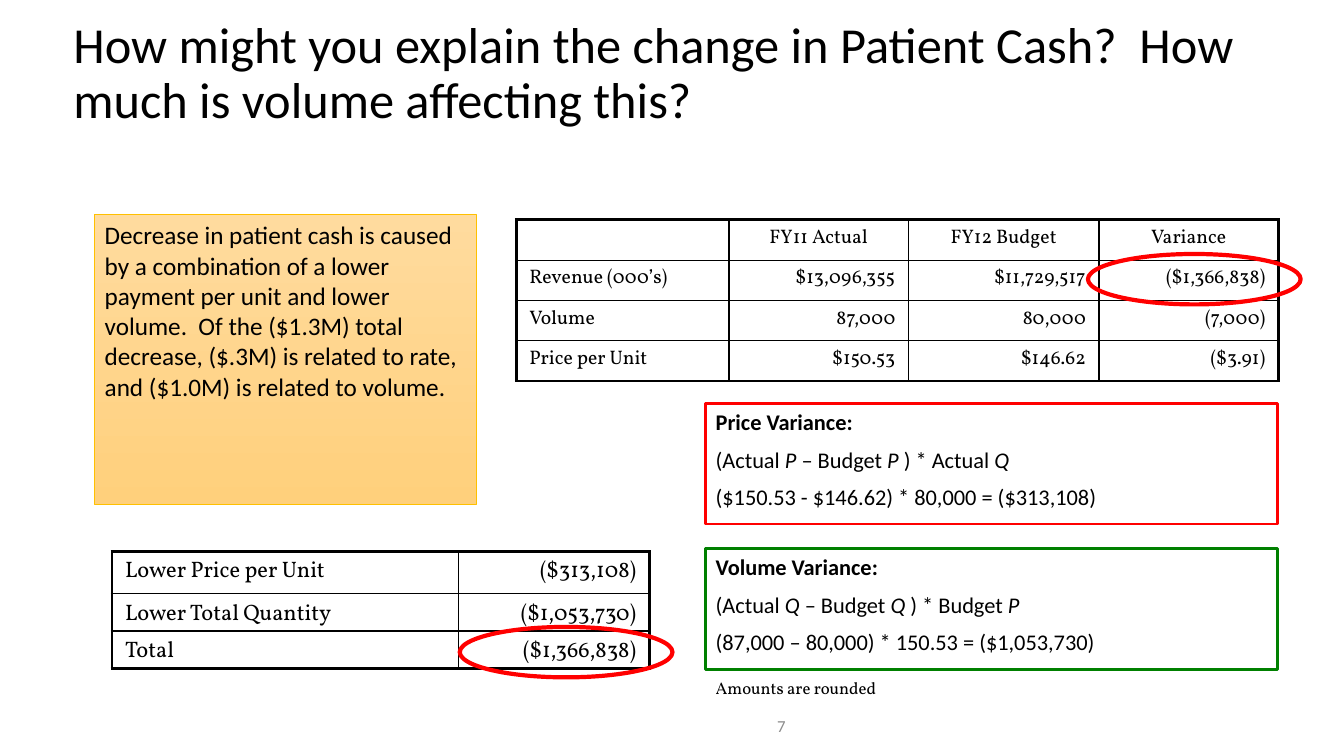
from dataclasses import dataclass

import pptx
import pptx.dml.color
import pptx.enum.shapes
import pptx.enum.text
import pptx.oxml
import pptx.oxml.ns
import pptx.util

Inches = pptx.util.Inches
Pt = pptx.util.Pt
ALIGN = pptx.enum.text.PP_ALIGN
ANCHOR = pptx.enum.text.MSO_ANCHOR
SHAPE = pptx.enum.shapes.MSO_SHAPE

COLORS = {
    "text": "000000",
    "number": "8C8C8C",
    "red": "FF0000",
    "green": "008000",
    "gold": "FFC000",
    "gold_top": "FFDB9E",
    "gold_bottom": "FFD07C",
}
SANS, SERIF = "Calibri", "Vollkorn"


@dataclass
class TextBlock:
    """A text area; underscores in a paragraph switch italics on and off."""
    bounds: tuple[float, float, float, float]
    paragraphs: list[str]
    size: float
    font: str = SANS
    color: str = "text"
    align: ALIGN = ALIGN.LEFT
    anchor: ANCHOR = ANCHOR.TOP
    line_spacing: float = 1.0
    bold_heading: bool = False
    outline: str = ""
    outline_width: float = 2
    gradient: tuple[str, ...] = ()


@dataclass
class Grid:
    left: float
    top: float
    columns: list[float]
    rows: list[float]
    values: list[list[str]]
    size: float
    has_header: bool = False


def rgb(name: str) -> pptx.dml.color.RGBColor:
    return pptx.dml.color.RGBColor.from_string(COLORS[name])


def apply_format(target: object, values: dict) -> None:
    for name, value in values.items():
        setattr(target, name, value)


def add_run(paragraph, text: str, font: str, size: float, color: str = "text",
            bold: bool = False, italic: bool = False) -> None:
    run = paragraph.add_run()
    run.text = text
    apply_format(run.font, {"name": font, "size": Pt(size), "bold": bold, "italic": italic})
    run.font.color.rgb = rgb(color)


def add_outline_shape(slide, kind: SHAPE, bounds: tuple, color: str, width: float):
    shape = slide.shapes.add_shape(kind, *map(Inches, bounds))
    shape.shadow.inherit = False
    shape.fill.background()
    shape.line.color.rgb = rgb(color)
    shape.line.width = Pt(width)
    return shape


def add_text_block(slide, block: TextBlock) -> None:
    if block.outline:
        shape = add_outline_shape(slide, SHAPE.RECTANGLE, block.bounds,
                                  block.outline, block.outline_width)
    else:
        shape = slide.shapes.add_textbox(*map(Inches, block.bounds))
    if block.gradient:
        shape.fill.gradient()
        shape.fill.gradient_angle = 270
        for stop, color in zip(shape.fill.gradient_stops, block.gradient):
            stop.color.rgb = rgb(color)
    frame = shape.text_frame
    apply_format(frame, {"word_wrap": True, "vertical_anchor": block.anchor})
    for index, text in enumerate(block.paragraphs):
        paragraph = frame.add_paragraph() if index else frame.paragraphs[0]
        apply_format(paragraph, {
            "alignment": block.align,
            "line_spacing": block.line_spacing,
            "space_before": Pt(7.6 if index else 0),
        })
        for part, piece in enumerate(text.split("_")):
            if piece:
                add_run(paragraph, piece, block.font, block.size, block.color,
                        bold=block.bold_heading and index == 0, italic=part % 2 == 1)


def set_borders(cell, thick_sides: dict[str, bool]) -> None:
    properties = cell._tc.get_or_add_tcPr()
    for index, (side, thick) in enumerate(thick_sides.items()):
        properties.insert(index, pptx.oxml.parse_xml(
            f'<a:ln{side} {pptx.oxml.ns.nsdecls("a")} w="{Pt(2.25 if thick else 1)}">'
            f'<a:solidFill><a:srgbClr val="{COLORS["text"]}"/></a:solidFill></a:ln{side}>'))


def add_grid(slide, grid: Grid) -> None:
    row_count, column_count = len(grid.rows), len(grid.columns)
    table = slide.shapes.add_table(
        row_count, column_count, Inches(grid.left), Inches(grid.top),
        Inches(sum(grid.columns)), Inches(sum(grid.rows))).table
    apply_format(table, {"first_row": False, "horz_banding": False})
    for column, width in zip(table.columns, grid.columns):
        column.width = Inches(width)
    for row, height in zip(table.rows, grid.rows):
        row.height = Inches(height)
    for r, values in enumerate(grid.values):
        for c, text in enumerate(values):
            cell = table.cell(r, c)
            apply_format(cell, {
                "margin_left": Inches(0.13), "margin_right": Inches(0.13),
                "margin_top": Inches(0.05), "margin_bottom": Inches(0.05),
            })
            cell.fill.background()
            set_borders(cell, {"L": c == 0, "R": c == column_count - 1,
                               "T": r == 0, "B": r == row_count - 1})
            paragraph = cell.text_frame.paragraphs[0]
            body_align = ALIGN.RIGHT if c else ALIGN.LEFT
            apply_format(paragraph, {
                "alignment": ALIGN.CENTER if grid.has_header and r == 0 else body_align,
                "space_after": Pt(12),
            })
            add_run(paragraph, text, SERIF, grid.size)


TEXT_BLOCKS = [
    # Title and slide number
    TextBlock((0.63, 0.17, 12.04, 1.14),
              ["How might you explain the change in Patient Cash?  How much is volume "
               "affecting this?"],
              36, anchor=ANCHOR.MIDDLE, line_spacing=0.9),
    TextBlock((5.11, 7.08, 2.78, 0.25), ["7"], 12, color="number",
              align=ALIGN.RIGHT, anchor=ANCHOR.MIDDLE),
    # Variance formulas
    TextBlock((7, 4, 5.67, 1.2),
              ["Price Variance:", "(Actual _P_ – Budget _P_ ) * Actual _Q_",
               "($150.53 - $146.62) * 80,000 = ($313,108)"],
              16, bold_heading=True, outline="red"),
    TextBlock((7, 5.44, 5.67, 1.2),
              ["Volume Variance:", "(Actual _Q_ – Budget _Q_ ) * Budget _P_",
               "(87,000 – 80,000) * 150.53 = ($1,053,730)"],
              16, bold_heading=True, outline="green"),
    TextBlock((7, 6.67, 5.56, 0.3), ["Amounts are rounded"], 12, font=SERIF),
    # Explanation
    TextBlock((0.94, 2.13, 3.78, 2.87),
              ["Decrease in patient cash is caused by a combination of a lower payment "
               "per unit and lower volume.  Of the ($1.3M) total decrease, ($.3M) is "
               "related to rate, and ($1.0M) is related to volume."],
              18, outline="gold", outline_width=0.5, gradient=("gold_top", "gold_bottom")),
]

GRIDS = [
    Grid(5.12, 2.18, [2.11, 1.78, 1.89, 1.78], [0.4] * 4, [
        ["", "FY11 Actual", "FY12 Budget", "Variance"],
        ["Revenue (000’s)", "$13,096,355", "$11,729,517", "($1,366,838)"],
        ["Volume", "87,000", "80,000", "(7,000)"],
        ["Price per Unit", "$150.53", "$146.62", "($3.91)"],
    ], 14, has_header=True),
    Grid(1.11, 5.47, [3.44, 1.89], [0.42, 0.37, 0.37], [
        ["Lower Price per Unit", "($313,108)"],
        ["Lower Total Quantity", "($1,053,730)"],
        ["Total", "($1,366,838)"],
    ], 16),
]

HIGHLIGHTS = [(10.79, 2.52, 2.11, 0.5), (4.56, 6.22, 2.11, 0.5)]


def main() -> None:
    presentation = pptx.Presentation()
    apply_format(presentation, {"slide_width": Inches(13.33), "slide_height": Inches(7.5)})
    slide = presentation.slides.add_slide(presentation.slide_layouts[6])
    for block in TEXT_BLOCKS:
        add_text_block(slide, block)
    for grid in GRIDS:
        add_grid(slide, grid)
    # Ellipses around the matching totals
    for bounds in HIGHLIGHTS:
        add_outline_shape(slide, SHAPE.OVAL, bounds, "red", 3)
    presentation.save("out.pptx")


if __name__ == "__main__":
    main()
